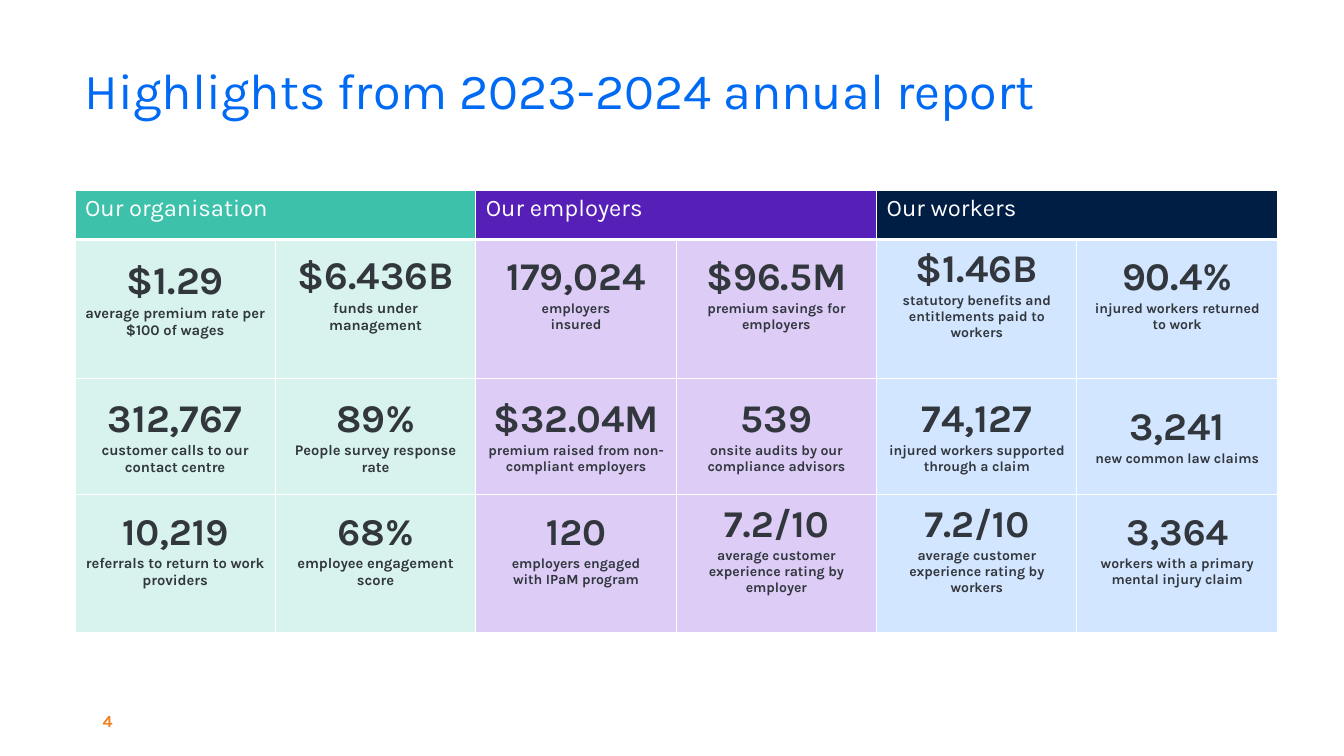
import lxml.etree
import pptx
import pptx.dml.color
import pptx.enum.text
import pptx.oxml.ns
import pptx.util

Cm = pptx.util.Cm
Pt = pptx.util.Pt
ALIGN = pptx.enum.text.PP_ALIGN
ANCHOR = pptx.enum.text.MSO_ANCHOR
FONT = "Karla"
COLORS = {
    "title": "016AF4", "page": "F37F21", "ink": "32373E", "white": "FFFFFF",
    "teal": "3EC1AB", "pale teal": "D8F3EE",
    "purple": "561FB7", "pale purple": "DCCCF6",
    "navy": "001D44", "pale blue": "D3E6FF",
}
GROUPS = [
    ("Our organisation", "teal", "pale teal", 10.5),
    ("Our employers", "purple", "pale purple", 10),
    ("Our workers", "navy", "pale blue", 10),
]
ROW_HEIGHTS = [1.24, 3.48, 2.92, 3.48]
FIGURE_SIZES = [28, 28, 27]
BOTTOM_MARGINS = [0.87, 0.13, 0.83]
HIGHLIGHTS = [
    [("$1.29", "average premium rate per $100 of wages"),
     ("$6.436B", "funds under\nmanagement"),
     ("179,024", "employers\ninsured"),
     ("$96.5M", "premium savings for employers"),
     ("$1.46B", "statutory benefits and entitlements paid to workers"),
     ("90.4%", "injured workers returned to work")],
    [("312,767", "customer calls to our contact centre"),
     ("89%", "People survey response rate"),
     ("$32.04M", "premium raised from non-compliant employers"),
     ("539", "onsite audits by our compliance advisors"),
     ("74,127", "injured workers supported through a claim"),
     ("3,241", "new common law claims")],
    [("10,219", "referrals to return to work providers"),
     ("68%", "employee engagement score"),
     ("120", "employers engaged\nwith IPaM program"),
     ("7.2/10", "average customer experience rating by employer"),
     ("7.2/10", "average customer experience rating by workers"),
     ("3,364", "workers with a primary mental injury claim")],
]


def rgb(name):
    """Return the named colour."""
    return pptx.dml.color.RGBColor.from_string(COLORS[name])


def add_run(paragraph, text, size, color, bold=False):
    """Add one styled run, breaking lines at newlines."""
    for index, line in enumerate(text.split("\n")):
        if index:
            paragraph.add_line_break()
        run = paragraph.add_run()
        run.text = line
        run.font.name = FONT
        run.font.size = Pt(size)
        run.font.bold = bold
        run.font.color.rgb = rgb(color)


def add_text(slide, box, text, size, color, bold=False, anchor=ANCHOR.TOP, spacing=1.0):
    """Place a one-paragraph text box in the given box."""
    frame = slide.shapes.add_textbox(*box).text_frame
    frame.word_wrap = True
    frame.vertical_anchor = anchor
    frame.paragraphs[0].line_spacing = spacing
    add_run(frame.paragraphs[0], text, size, color, bold)


def style_cell(cell, fill, top=0.75, bottom=0.75):
    """Give a cell white borders and a solid fill."""
    properties = cell._tc.get_or_add_tcPr()
    for side, width in (("L", 0.75), ("R", 0.75), ("T", top), ("B", bottom)):
        line = lxml.etree.SubElement(
            properties, pptx.oxml.ns.qn(f"a:ln{side}"), w=str(int(Pt(width))))
        solid = lxml.etree.SubElement(line, pptx.oxml.ns.qn("a:solidFill"))
        lxml.etree.SubElement(solid, pptx.oxml.ns.qn("a:srgbClr"), val=COLORS["white"])
    cell.fill.solid()
    cell.fill.fore_color.rgb = rgb(fill)


def fill_highlight(cell, figure, label, figure_size, label_size):
    """Write a large figure above its label."""
    cell.vertical_anchor = ANCHOR.MIDDLE
    frame = cell.text_frame
    frame.paragraphs[0].alignment = ALIGN.CENTER
    add_run(frame.paragraphs[0], figure, figure_size, "ink", True)
    caption = frame.add_paragraph()
    caption.alignment = ALIGN.CENTER
    add_run(caption, label, label_size, "ink", True)


def add_highlights(slide, left, top, width, height):
    """Build the table of highlights in the given box."""
    columns = 2 * len(GROUPS)
    table = slide.shapes.add_table(
        len(ROW_HEIGHTS), columns, left, top, width, height).table
    for column in table.columns:
        column.width = int(width / columns)
    for row, share in zip(table.rows, ROW_HEIGHTS):
        row.height = int(height * share / sum(ROW_HEIGHTS))

    for index in range(columns):
        heading, dark, pale, label_size = GROUPS[index // 2]
        header = table.cell(0, index)
        style_cell(header, dark, bottom=2.1)
        if index % 2 == 0:
            header.merge(table.cell(0, index + 1))
            add_run(header.text_frame.paragraphs[0], heading, 17, "white")
        for row, highlights in enumerate(HIGHLIGHTS):
            cell = table.cell(row + 1, index)
            style_cell(cell, pale, top=0.75 if row else 2.1)
            cell.margin_bottom = Cm(BOTTOM_MARGINS[row])
            fill_highlight(cell, *highlights[index], FIGURE_SIZES[row], label_size)
    table.cell(1, 0).margin_bottom = Cm(0.63)


def main():
    """Build and save the highlights slide."""
    deck = pptx.Presentation()
    deck.slide_width, deck.slide_height = Cm(33.87), Cm(19.05)
    slide = deck.slides.add_slide(deck.slide_layouts[6])
    left, width = Cm(1.89), Cm(30.3)
    add_text(slide, (Cm(2.34), Cm(17.65), Cm(7.62), Cm(1.02)), "4", 12, "page",
             bold=True, anchor=ANCHOR.MIDDLE)
    add_highlights(slide, left, Cm(4.79), width, Cm(11.16))
    add_text(slide, (left, Cm(1.55), width, Cm(1.7)),
             "Highlights from 2023-2024 annual report", 36, "title", spacing=0.9)
    deck.save("out.pptx")


if __name__ == "__main__":
    main()
